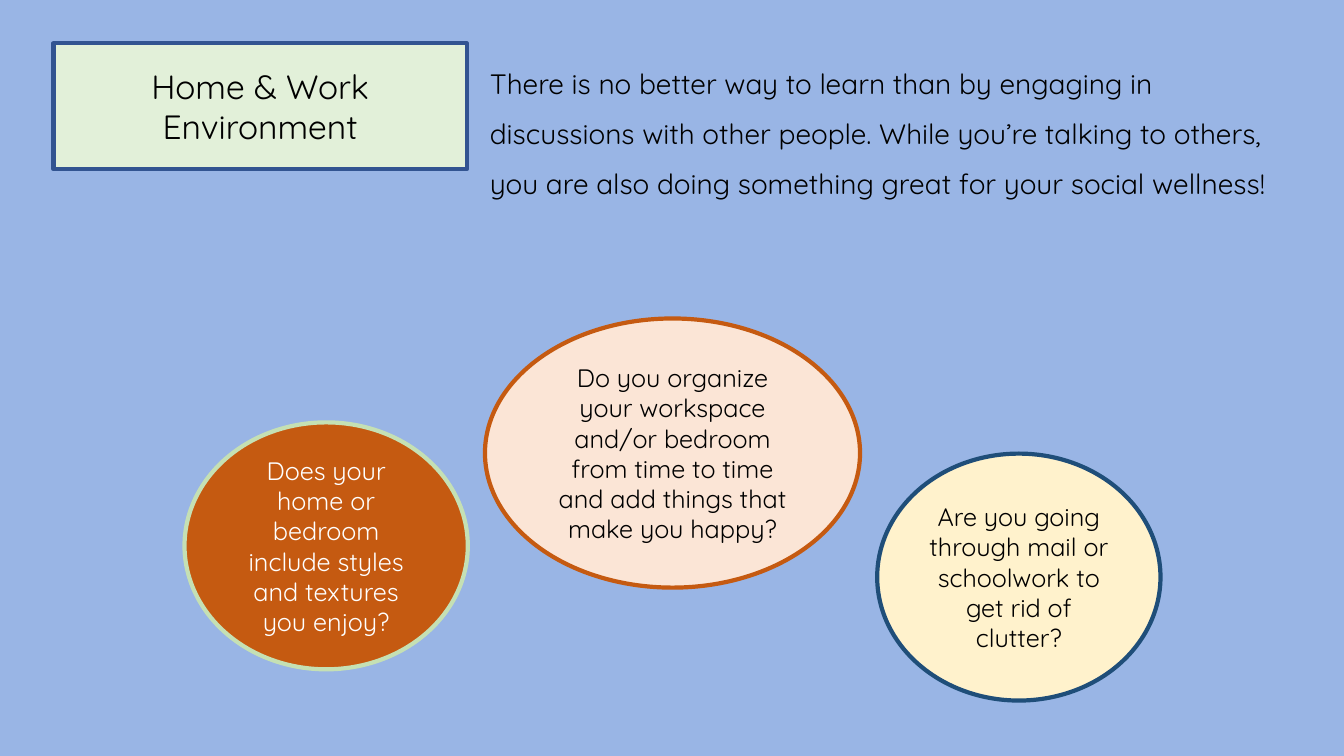
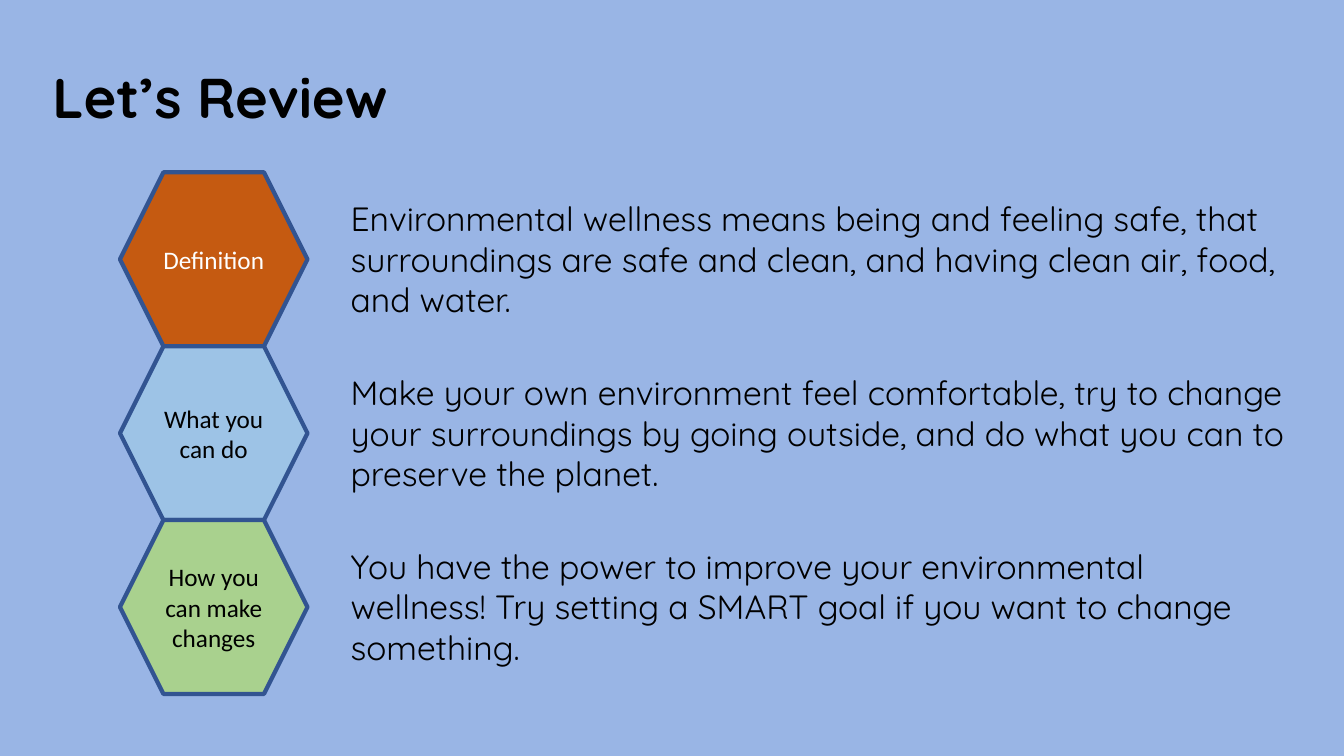
from dataclasses import dataclass

from lxml import etree
from pptx import Presentation
from pptx.dml.color import RGBColor
from pptx.enum.shapes import MSO_SHAPE
from pptx.enum.text import MSO_ANCHOR, MSO_AUTO_SIZE, PP_ALIGN
from pptx.oxml.ns import qn
from pptx.util import Inches, Pt

ELLIPSE, HEXAGON = MSO_SHAPE.OVAL, MSO_SHAPE.HEXAGON
LEFT, CENTER = PP_ALIGN.LEFT, PP_ALIGN.CENTER
TOP, MIDDLE = MSO_ANCHOR.TOP, MSO_ANCHOR.MIDDLE
NO_AUTOFIT = MSO_AUTO_SIZE.NONE
TITLE_ONLY_LAYOUT = 5


@dataclass(frozen=True)
class Theme:
    background: str = "99B5E5"
    black: str = "000000"
    white: str = "FFFFFF"
    blue_line: str = "325491"
    navy: str = "1F4E79"
    orange: str = "C55A11"
    peach: str = "FBE5D6"
    cream: str = "FFF2CC"
    sky: str = "9DC3E6"
    green: str = "A9D18E"
    light_green: str = "C5E0B4"
    pale_green: str = "E2F0D9"
    main_font: str = "Quicksand"
    label_font: str = "Calibri"
    title_size: int = 40
    body_size: int = 24
    intro_size: int = 20
    label_size: int = 18
    line_width: int = 3


THEME = Theme()

# Left, top, width, height, fill, line, text colour, text
QUESTIONS = [
    (1.83, 4.19, 2.81, 2.45, THEME.orange, THEME.light_green, THEME.white,
     "Does your home or bedroom include styles and textures you enjoy?"),
    (4.81, 3.16, 3.72, 2.67, THEME.peach, THEME.orange, THEME.black,
     "Do you organize your workspace and/or bedroom from time to time "
     "and add things that make you happy?"),
    (8.7, 4.5, 2.81, 2.45, THEME.cream, THEME.navy, THEME.black,
     "Are you going through mail or schoolwork to get rid of clutter?"),
]

# Label, fill, text colour, summary
REVIEW_ROWS = [
    ("Definition", THEME.orange, THEME.white,
     "Environmental wellness means being and feeling safe, that surroundings "
     "are safe and clean, and having clean air, food, and water."),
    ("What you can do", THEME.sky, THEME.black,
     "Make your own environment feel comfortable, try to change your "
     "surroundings by going outside, and do what you can to preserve the planet."),
    ("How you can make changes", THEME.green, THEME.black,
     "You have the power to improve your environmental wellness! Try setting "
     "a SMART goal if you want to change something."),
]


def color(value):
    return RGBColor.from_string(value)


def write_text(shape, text, size, font=THEME.main_font, text_color=THEME.black,
               align=LEFT, anchor=TOP, bold=False, line_spacing=1.0):
    frame = shape.text_frame
    frame.word_wrap = True
    frame.auto_size = NO_AUTOFIT
    frame.vertical_anchor = anchor
    paragraph = frame.paragraphs[0]
    paragraph.alignment = align
    paragraph.line_spacing = line_spacing
    run = paragraph.add_run()
    run.text = text
    run.font.name = font
    run.font.size = Pt(size)
    run.font.bold = bold
    run.font.color.rgb = color(text_color)


def paint(shape, fill, line):
    shape.fill.solid()
    shape.fill.fore_color.rgb = color(fill)
    shape.line.color.rgb = color(line)
    shape.line.width = Pt(THEME.line_width)


def place_title(slide, left, top, width, height):
    title = slide.shapes.title
    title.left, title.top = Inches(left), Inches(top)
    title.width, title.height = Inches(width), Inches(height)
    return title


def round_corners(placeholder):
    """Give a placeholder, already placed, a rounded outline."""
    properties = placeholder.element.spPr
    geometry = etree.SubElement(properties, qn("a:prstGeom"), prst="roundRect")
    etree.SubElement(geometry, qn("a:avLst"))


def add_label_shape(slide, kind, box, fill, line, text, text_color, font):
    shape = slide.shapes.add_shape(kind, *map(Inches, box))
    shape.shadow.inherit = False
    paint(shape, fill, line)
    write_text(shape, text, THEME.label_size, font, text_color, CENTER, MIDDLE)


def add_text_box(slide, box, text, size, line_spacing=1.0):
    text_box = slide.shapes.add_textbox(*map(Inches, box))
    write_text(text_box, text, size, line_spacing=line_spacing)


def add_slide(presentation):
    return presentation.slides.add_slide(presentation.slide_layouts[TITLE_ONLY_LAYOUT])


def build_environment_slide(presentation):
    slide = add_slide(presentation)

    # Framed title and introduction
    title = place_title(slide, 0.53, 0.43, 4.1, 1.25)
    round_corners(title)
    paint(title, THEME.pale_green, THEME.blue_line)
    write_text(title, "Home & Work Environment", THEME.body_size,
               align=CENTER, anchor=MIDDLE)
    add_text_box(
        slide, (4.76, 0.44, 7.92, 2.06),
        "There is no better way to learn than by engaging in discussions with "
        "other people. While you’re talking to others, you are also doing "
        "something great for your social wellness!",
        THEME.intro_size, line_spacing=1.5)

    # Question bubbles
    for *box, fill, line, text_color, question in QUESTIONS:
        add_label_shape(slide, ELLIPSE, box, fill, line, question, text_color,
                        THEME.main_font)


def build_review_slide(presentation):
    slide = add_slide(presentation)
    title = place_title(slide, 0.42, 0.57, 11.56, 0.77)
    write_text(title, "Let’s Review", THEME.title_size, bold=True)

    # Stacked hexagons, each with its summary centred beside it
    first_top, row_height, summary_height = 1.71, 1.725, 1.31
    for index, (label, fill, text_color, summary) in enumerate(REVIEW_ROWS):
        top = first_top + index * row_height
        add_label_shape(slide, HEXAGON, (1.19, top, 1.86, row_height), fill,
                        THEME.blue_line, label, text_color, THEME.label_font)
        summary_top = top + (row_height - summary_height) / 2
        add_text_box(slide, (3.38, summary_top, 9.47, summary_height), summary,
                     THEME.body_size)


def main():
    presentation = Presentation()
    presentation.slide_width = Inches(13.33)
    presentation.slide_height = Inches(7.5)

    # Shared background
    background = presentation.slide_master.background.fill
    background.solid()
    background.fore_color.rgb = color(THEME.background)

    build_environment_slide(presentation)
    build_review_slide(presentation)
    presentation.save("out.pptx")


if __name__ == "__main__":
    main()
